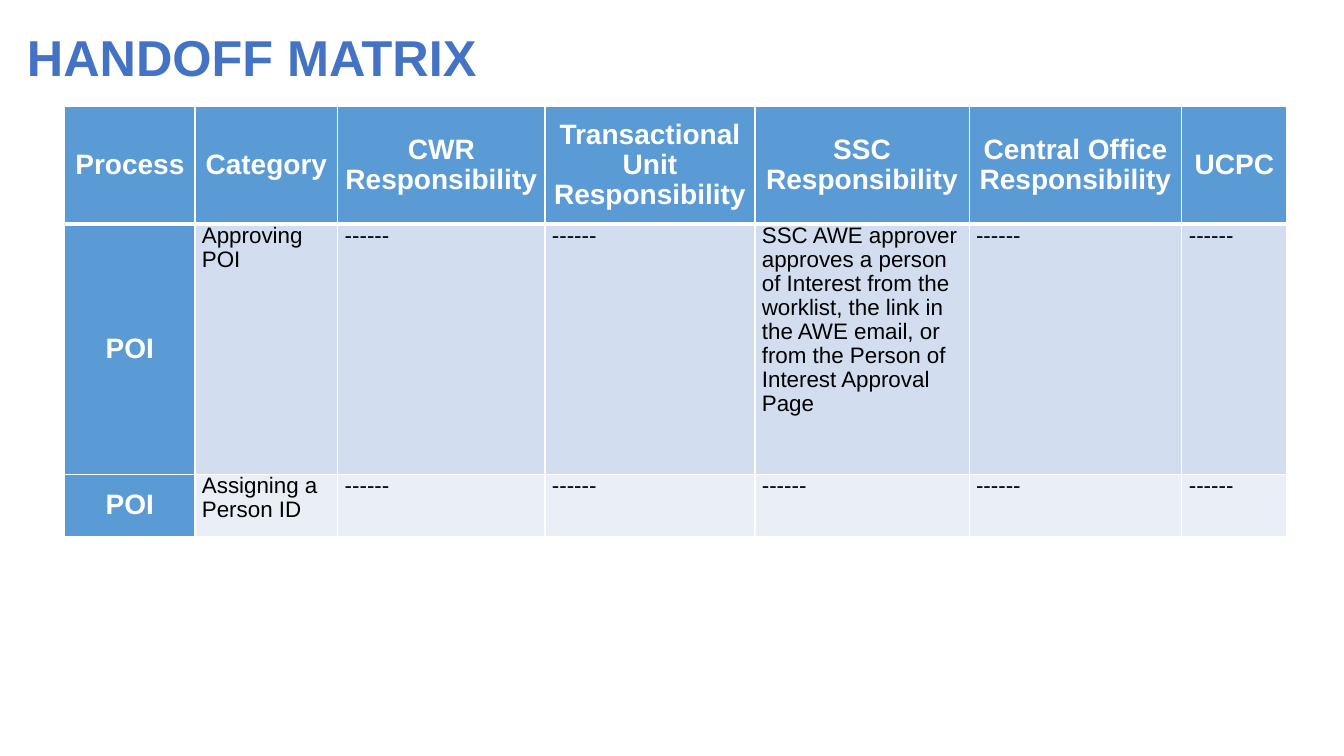
from dataclasses import dataclass

from lxml.etree import SubElement
from pptx import Presentation
from pptx.dml.color import RGBColor
from pptx.enum.text import MSO_ANCHOR, PP_ALIGN
from pptx.oxml.ns import qn
from pptx.util import Pt


@dataclass(frozen=True)
class Theme:
    font: str = "Arial"
    title_color: str = "4472C4"
    accent: str = "5B9BD5"
    bands: tuple = ("D2DEEF", "EAEFF7")
    white: str = "FFFFFF"
    black: str = "000000"
    title_size: int = 36
    heading_size: int = 20
    body_size: int = 16


theme = Theme()


def write_text(frame, text, size, color, bold=False, align=PP_ALIGN.LEFT, spacing=None):
    para = frame.paragraphs[0]
    para.alignment = align
    para.line_spacing = spacing
    span = para.add_run()
    span.text = text
    span.font.name = theme.font
    span.font.size = Pt(size)
    span.font.bold = bold
    span.font.color.rgb = RGBColor.from_string(color)


def set_border(cell, side, width):
    line = SubElement(cell._tc.get_or_add_tcPr(), qn(f"a:{side}"), w=str(Pt(width)))
    fill = SubElement(line, qn("a:solidFill"))
    SubElement(fill, qn("a:srgbClr"), val=theme.white)


deck = Presentation()
deck.slide_width, deck.slide_height = Pt(960), Pt(540)
page = deck.slides.add_slide(deck.slide_layouts[5])

title = page.shapes.title
title.left, title.top, title.width, title.height = Pt(12), Pt(13), Pt(838), Pt(54)
title.text_frame.vertical_anchor = MSO_ANCHOR.MIDDLE
write_text(title.text_frame, "HANDOFF MATRIX", theme.title_size, theme.title_color, bold=True)

empty = "------"
approval = (
    "SSC AWE approver approves a person of Interest from the worklist, "
    "the link in the AWE email, or from the Person of Interest Approval Page"
)
matrix = [
    ["Process", "Category", "CWR Responsibility", "Transactional Unit Responsibility",
     "SSC Responsibility", "Central Office Responsibility", "UCPC"],
    ["POI", "Approving POI", empty, empty, approval, empty, empty],
    ["POI", "Assigning a Person ID", empty, empty, empty, empty, empty],
]
column_widths = [93, 102, 148, 150, 153, 152, 75]
row_heights = [83.5, 179, 44.5]

table = page.shapes.add_table(
    len(row_heights), len(column_widths),
    Pt(46.3), Pt(76.3), Pt(sum(column_widths)), Pt(sum(row_heights)),
).table
for column, width in zip(table.columns, column_widths):
    column.width = Pt(width)
for row, height in zip(table.rows, row_heights):
    row.height = Pt(height)

for row_index, row_texts in enumerate(matrix):
    for column_index, text in enumerate(row_texts):
        cell = table.cell(row_index, column_index)
        cell.margin_left = cell.margin_right = Pt(5)
        cell.margin_top = cell.margin_bottom = Pt(0)
        for side in ("lnL", "lnR", "lnT", "lnB"):
            below_header = (row_index, side) in ((0, "lnB"), (1, "lnT"))
            set_border(cell, side, 3 if below_header else 1)
        cell.fill.solid()
        if row_index == 0 or column_index == 0:
            cell.fill.fore_color.rgb = RGBColor.from_string(theme.accent)
            cell.vertical_anchor = MSO_ANCHOR.MIDDLE
            write_text(cell.text_frame, text, theme.heading_size, theme.white,
                       bold=True, align=PP_ALIGN.CENTER, spacing=0.97)
        else:
            cell.fill.fore_color.rgb = RGBColor.from_string(theme.bands[row_index - 1])
            cell.vertical_anchor = MSO_ANCHOR.TOP
            write_text(cell.text_frame, text, theme.body_size, theme.black, spacing=0.97)

deck.save("out.pptx")
